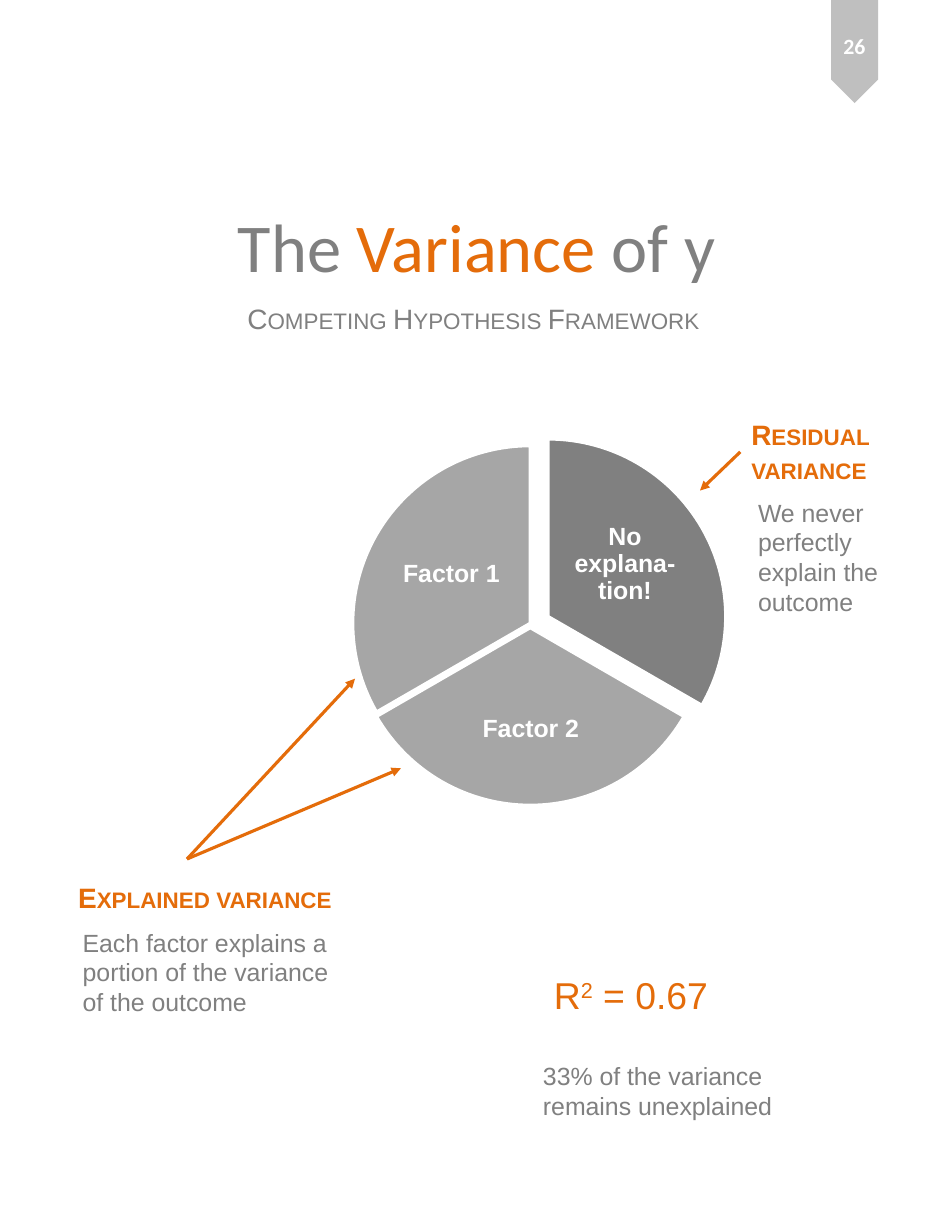
import pptx
import pptx.dml.color
import pptx.enum.shapes
import pptx.enum.text
import pptx.oxml
import pptx.oxml.ns
import pptx.util

COLUMNS, ROWS = 85, 110  # square grid over the whole page
PAGE_WIDTH, PAGE_HEIGHT = pptx.util.Inches(8.5), pptx.util.Inches(11)
ORANGE, GRAY, LIGHT, RIBBON, WHITE = "E46C0A", "808080", "A6A6A6", "BFBFBF", "FFFFFF"
SHAPES = pptx.enum.shapes.MSO_SHAPE
CENTER = pptx.enum.text.PP_ALIGN.CENTER
MIDDLE = pptx.enum.text.MSO_ANCHOR.MIDDLE


def color(value):
    return pptx.dml.color.RGBColor.from_string(value)


def emu(*lengths):
    """Turn alternating column and row counts into lengths on the page."""
    units = (PAGE_WIDTH / COLUMNS, PAGE_HEIGHT / ROWS)
    return [round(length * units[i % 2]) for i, length in enumerate(lengths)]


def add_text(slide, box, *paragraphs, size=16, font="Arial", fill=GRAY, bold=False,
             small_caps=False, align=None, anchor=None, inset=None, spacing=None, wrap=True):
    """Each paragraph is a string or a list of (text, run options)."""
    shape = slide.shapes.add_textbox(*emu(*box))
    frame = shape.text_frame
    frame.word_wrap = wrap
    if anchor is not None:
        frame.vertical_anchor = anchor
    if inset is not None:
        frame.margin_left = frame.margin_right = pptx.util.Inches(inset)
        frame.margin_top = frame.margin_bottom = pptx.util.Inches(inset)
    for index, content in enumerate(paragraphs):
        paragraph = frame.add_paragraph() if index else frame.paragraphs[0]
        paragraph.alignment = align
        paragraph.line_spacing = spacing
        for text, options in [(content, {})] if isinstance(content, str) else content:
            run = paragraph.add_run()
            run.text = text
            run.font.size = pptx.util.Pt(size)
            run.font.name = font
            run.font.bold = bold
            run.font.color.rgb = color(options.get("fill", fill))
            properties = run.font._element
            if small_caps:
                properties.set("cap", "small")
            if options.get("superscript"):
                properties.set("baseline", "30000")
    return shape


def add_preset(slide, preset, box, fill, line=None):
    shape = slide.shapes.add_shape(preset, *emu(*box))
    shape.shadow.inherit = False
    shape.fill.solid()
    shape.fill.fore_color.rgb = color(fill)
    if line:
        shape.line.color.rgb = color(line)
        shape.line.width = pptx.util.Pt(2)
    else:
        shape.line.fill.background()
    return shape


def add_arrow(slide, start, end, source=None):
    arrow = slide.shapes.add_connector(
        pptx.enum.shapes.MSO_CONNECTOR.STRAIGHT, *emu(*start, *end))
    if source is not None:
        arrow.begin_connect(source, 1)
    arrow.line.color.rgb = color(ORANGE)
    arrow.line.width = pptx.util.Pt(2)
    head = pptx.oxml.ns.qn("a:tailEnd")
    arrow.line._get_or_add_ln().makeelement(head)
    line = arrow.line._get_or_add_ln()
    line.append(line.makeelement(head, {"type": "triangle"}))
    properties = arrow._element.spPr
    properties.append(properties.makeelement(pptx.oxml.ns.qn("a:effectLst")))


def add_page_ribbon(slide, box):
    left, top, width, height = box
    # The pentagon is laid out sideways, then turned to point down.
    sideways = (left + (width - height) / 2, top + (height - width) / 2, height, width)
    add_preset(slide, SHAPES.PENTAGON, sideways, RIBBON).rotation = 90
    add_text(slide, (left - 1.25, 1.1, 6.7, 5.9), "26", size=14, font="Calibri",
             fill=WHITE, bold=True, align=CENTER, anchor=MIDDLE)


def add_heading(slide, box):
    left, top, width, height = box
    add_text(slide, box, [("The ", {}), ("Variance", {"fill": ORANGE}), (" of y", {})],
             size=44, font="Calibri", align=CENTER, anchor=MIDDLE)
    add_text(slide, (left + 16.8, top + 13.7, 43.1, 4), "Competing Hypothesis Framework",
             size=18, small_caps=True, wrap=False)


def add_variance_pie(slide, box):
    """Three equal slices, each pulled out of the circle that fills the box."""
    left, top, width, height = box
    right, lower, upper = 18, 90, 162  # angles in units of 5/3 degree
    slices = [  # label, shift, start, end, fill, label box
        ("No explana-tion!", (1.6, -1), upper, right, GRAY, (18.9, 4.9, 10.8, 10.6)),
        ("Factor 2", (0, 0), right, lower, LIGHT, (8.7, 20, 14.4, 9.8)),
        ("Factor 1", (0, -0.4), lower, upper, LIGHT, (3.4, 5.8, 10.8, 10.6)),
    ]
    for label, (dx, dy), start, end, fill, (x, y, w, h) in slices:
        pie = add_preset(slide, SHAPES.PIE, (left + dx, top + dy, width, height), fill, WHITE)
        pie.adjustments[0], pie.adjustments[1] = start, end
        add_text(slide, (left + x, top + y, w, h), label, fill=WHITE, bold=True,
                 align=CENTER, anchor=MIDDLE, inset=0.02, spacing=0.9)


def add_callout(slide, box, heading, note, note_box, targets, start=None):
    """Without a start, the arrow leaves the middle of the heading's left side."""
    left, top, width, height = box
    title = add_text(slide, box, *heading, size=18, fill=ORANGE, bold=True,
                     small_caps=True, wrap=False)
    add_text(slide, note_box, note)
    for target in targets:
        add_arrow(slide, start or (left, top + height / 2), target,
                  None if start else title)


def add_r_squared(slide, box):
    left, top, width, height = box
    add_text(slide, box, [("R", {}), ("2", {"superscript": True}), (" = 0.67 ", {})],
             size=24, fill=ORANGE, align=CENTER)
    add_text(slide, (left + 4.2, top + 7.9, 30, 6.4),
             "33% of the variance remains unexplained")


def main():
    presentation = pptx.Presentation()
    presentation.slide_width, presentation.slide_height = PAGE_WIDTH, PAGE_HEIGHT
    slide = presentation.slides.add_slide(presentation.slide_layouts[6])
    add_page_ribbon(slide, (74.2, 0, 4.2, 9.2))
    add_heading(slide, (4.3, 12.7, 76.5, 18.3))
    add_variance_pie(slide, (31.5, 40.2, 31.7, 31.7))
    add_callout(slide, (6, 78.1, 25, 4), ["Explained variance"],
                "Each factor explains a portion of the variance of the outcome",
                (6.4, 82.3, 25.6, 9.1), [(31.7, 60.6), (35.8, 68.6)], start=(16.7, 76.7))
    add_callout(slide, (66.1, 36.8, 13.4, 7.1), ["Residual", "variance"],
                "We never perfectly explain the outcome",
                (66.7, 43.9, 17.3, 11.8), [(62.5, 43.8)])
    add_r_squared(slide, (43.3, 86.3, 27, 5))
    presentation.save("out.pptx")


if __name__ == "__main__":
    main()
